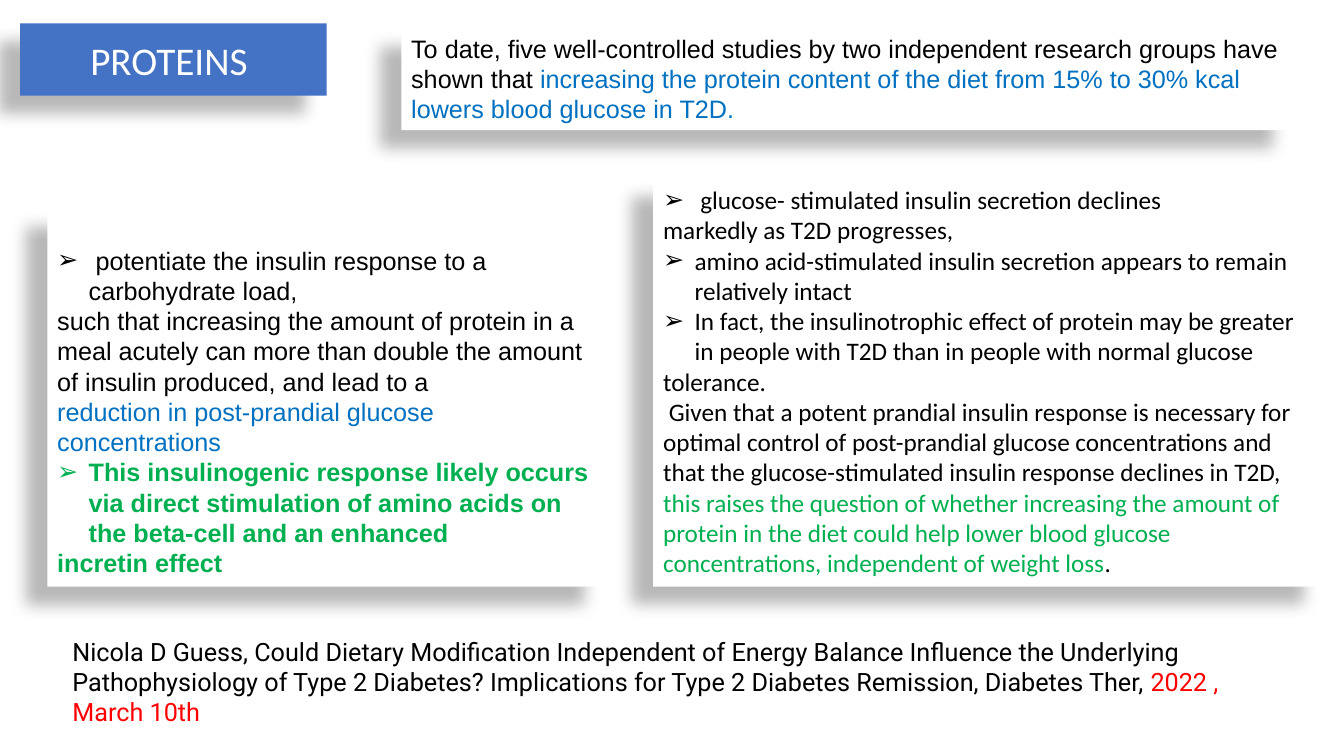
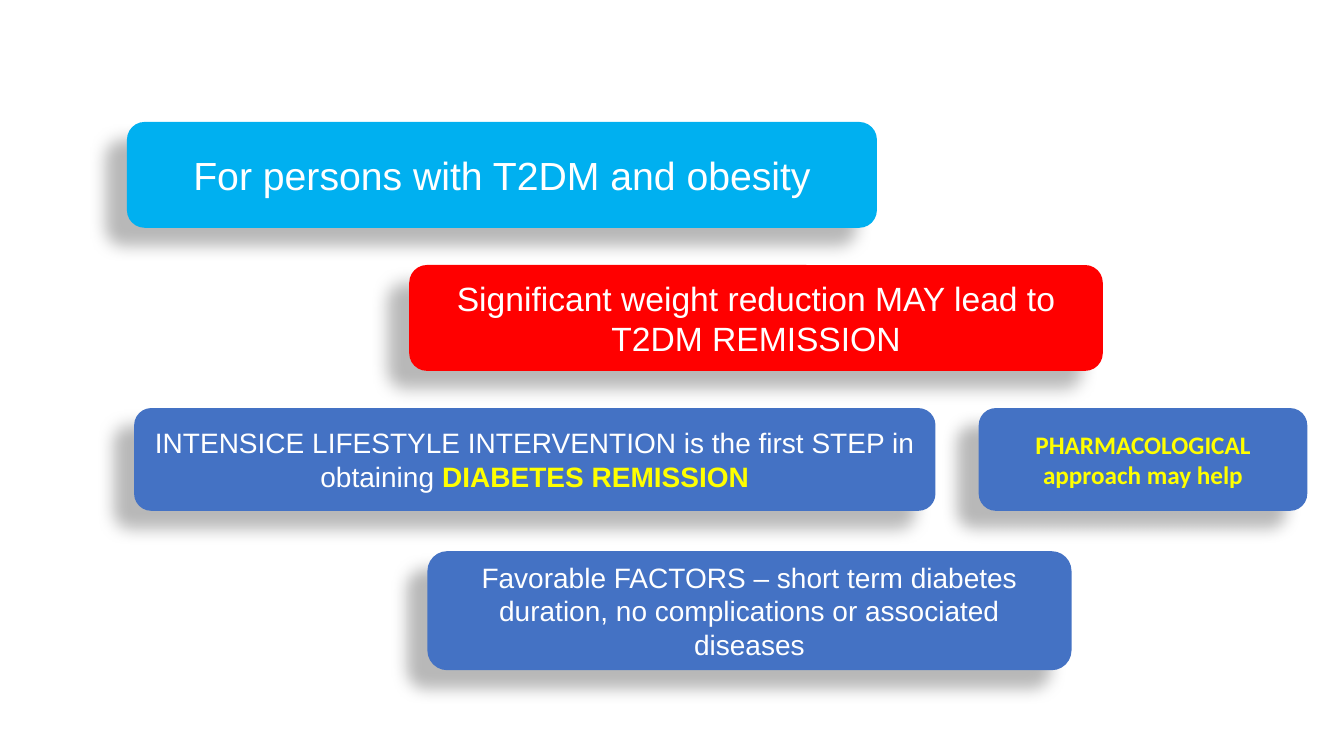
"""Build two slides on protein intake and remission of type 2 diabetes."""
from lxml import etree
from pptx import Presentation
from pptx.dml.color import RGBColor
from pptx.enum.shapes import MSO_SHAPE
from pptx.enum.text import MSO_ANCHOR, MSO_AUTO_SIZE, PP_ALIGN
from pptx.oxml.ns import qn
from pptx.util import Pt

RECT, ROUNDED = MSO_SHAPE.RECTANGLE, MSO_SHAPE.ROUNDED_RECTANGLE
LEFT, CENTER = PP_ALIGN.LEFT, PP_ALIGN.CENTER
TOP, MIDDLE = MSO_ANCHOR.TOP, MSO_ANCHOR.MIDDLE
GROW, FIXED = MSO_AUTO_SIZE.SHAPE_TO_FIT_TEXT, MSO_AUTO_SIZE.NONE


class Theme:
    black, white = "000000", "FFFFFF"
    box_blue, sky, red = "4472C4", "00B0F0", "FF0000"
    link_blue, green, yellow = "0070C0", "00B050", "FFFF00"
    sans, humanist, citation = "Arial", "Calibri", "Roboto"
    body, step, lead, title = 18, 20, 24, 28
    bullet, bullet_indent = "➢", 22.5
    inset, body_line = 3.6, 21.6
    shadow_blur, shadow_distance, shadow_angle, shadow_alpha = 11.8, 19.7, 141, 28


SLIDE_SIZE = (960, 540)

CITATION_BOX = (44.6, 450.7, 882, 72.7)
CITATION = [(False, [
    ("Nicola D Guess, Could Dietary Modification Independent of Energy Balance Influence "
     "the Underlying Pathophysiology of Type 2 Diabetes? Implications for Type 2 Diabetes "
     "Remission, Diabetes Ther, ", Theme.black, False),
    ("2022 , March 10th", Theme.red, False),
])]

TITLE_BOX = (14.4, 16.6, 218.9, 51.8)
TITLE = [(False, [("PROTEINS ", Theme.white, False)])]

INSULIN_RESPONSE = [
    (True, [(" potentiate the insulin response to a carbohydrate load,", Theme.black, False)]),
    (False, [("such that increasing the amount of protein in a meal acutely can more than "
              "double the amount of insulin produced, and lead to a", Theme.black, False)]),
    (False, [("reduction in post-prandial glucose concentrations", Theme.link_blue, False)]),
    (True, [("This insulinogenic response likely occurs via direct stimulation of amino acids "
             "on the beta-cell and an enhanced", Theme.green, True)]),
    (False, [("incretin effect", Theme.green, True)]),
]

INSULIN_SECRETION = [
    (True, [(" glucose- stimulated insulin secretion declines", Theme.black, False)]),
    (False, [("markedly as T2D progresses,", Theme.black, False)]),
    (True, [("amino acid-stimulated insulin secretion appears to remain relatively intact",
             Theme.black, False)]),
    (True, [("In fact, the insulinotrophic effect of protein may be greater in people with "
             "T2D than in people with normal glucose", Theme.black, False)]),
    (False, [("tolerance.", Theme.black, False)]),
    (False, [
        (" Given that a potent prandial insulin response is necessary for optimal control of "
         "post-prandial glucose concentrations and that the glucose-stimulated insulin "
         "response declines in T2D, ", Theme.black, False),
        ("this raises the question of whether increasing the amount of protein in the diet "
         "could help lower blood glucose concentrations, independent of weight loss",
         Theme.green, False),
        (".", Theme.black, False),
    ]),
]

STUDIES = [(False, [
    ("To date, five well-controlled studies by two independent research groups have shown "
     "that ", Theme.black, False),
    ("increasing the protein content of the diet from 15% to 30% kcal lowers blood glucose "
     "in T2D.", Theme.link_blue, False),
])]

PANELS = [
    ((33.8, 149.8, 398.9, 269.3), Theme.sans, INSULIN_RESPONSE, Theme.body_line),
    ((466.6, 128.2, 480.2, 290.9), Theme.humanist, INSULIN_SECRETION, 0),
    ((286.6, 20.2, 637.2, 72.7), Theme.sans, STUDIES, 0),
]

FIRST_ROW_TOP, ROW_PITCH = 87.1, 102.2
STEPS = [
    (0, 90.7, 535.7, 75.6, Theme.sky, Theme.sans, Theme.title,
     [("For persons with T2DM and obesity", Theme.white, False)]),
    (2, 95.8, 572.4, 73.4, Theme.box_blue, Theme.sans, Theme.step,
     [("INTENSICE LIFESTYLE INTERVENTION is the first STEP in obtaining ", Theme.white, False),
      ("DIABETES REMISSION", Theme.yellow, True)]),
    (1, 292.3, 495.4, 75.6, Theme.red, Theme.sans, Theme.lead,
     [("Significant weight reduction MAY lead to T2DM REMISSION", Theme.white, False)]),
    (3, 305.3, 460.1, 85, Theme.box_blue, Theme.sans, Theme.step,
     [("Favorable FACTORS – short term diabetes duration, no complications or associated "
       "diseases", Theme.white, False)]),
    (2, 699.1, 234.7, 73.4, Theme.box_blue, Theme.humanist, Theme.body,
     [("PHARMACOLOGICAL approach may help", Theme.yellow, True)]),
]


def add_bullet(paragraph):
    properties = paragraph._p.get_or_add_pPr()
    properties.set("marL", str(Pt(Theme.bullet_indent)))
    properties.set("indent", str(-Pt(Theme.bullet_indent)))
    etree.SubElement(properties, qn("a:buFont"), typeface=Theme.sans)
    etree.SubElement(properties, qn("a:buChar"), char=Theme.bullet)


def write(frame, paragraphs, font, size, align=LEFT, anchor=TOP, fit=GROW):
    frame.word_wrap = True
    frame.auto_size = fit
    frame.vertical_anchor = anchor
    for index, (bulleted, runs) in enumerate(paragraphs):
        paragraph = frame.add_paragraph() if index else frame.paragraphs[0]
        paragraph.alignment = align
        if bulleted:
            add_bullet(paragraph)
        for text, color, bold in runs:
            run = paragraph.add_run()
            run.text = text
            run.font.name = font
            run.font.size = Pt(size)
            run.font.bold = bold
            run.font.color.rgb = RGBColor.from_string(color)


def cast_shadow(card):
    card.shadow.inherit = False
    effects = card._element.spPr.find(qn("a:effectLst"))
    shadow = etree.SubElement(
        effects, qn("a:outerShdw"), blurRad=str(Pt(Theme.shadow_blur)),
        dist=str(Pt(Theme.shadow_distance)), dir=str(Theme.shadow_angle * 60000),
        algn="ctr", rotWithShape="0")
    color = etree.SubElement(shadow, qn("a:srgbClr"), val=Theme.black)
    etree.SubElement(color, qn("a:alpha"), val=str(Theme.shadow_alpha * 1000))


def add_card(slide, outline, box, fill):
    card = slide.shapes.add_shape(outline, *map(Pt, box))
    card.fill.solid()
    card.fill.fore_color.rgb = RGBColor.from_string(fill)
    card.line.fill.background()
    cast_shadow(card)
    return card.text_frame


def build_proteins(slide):
    citation = slide.shapes.add_textbox(*map(Pt, CITATION_BOX)).text_frame
    write(citation, CITATION, Theme.citation, Theme.body)
    title = add_card(slide, RECT, TITLE_BOX, Theme.box_blue)
    write(title, TITLE, Theme.humanist, Theme.title, CENTER, MIDDLE, FIXED)
    for box, font, paragraphs, headroom in PANELS:
        panel = add_card(slide, RECT, box, Theme.white)
        panel.margin_top = Pt(Theme.inset + headroom)
        write(panel, paragraphs, font, Theme.body)


def build_remission(slide):
    for row, left, width, height, fill, font, size, runs in STEPS:
        box = (left, FIRST_ROW_TOP + row * ROW_PITCH, width, height)
        step = add_card(slide, ROUNDED, box, fill)
        write(step, [(False, runs)], font, size, CENTER, MIDDLE, FIXED)


def main():
    deck = Presentation()
    deck.slide_width, deck.slide_height = map(Pt, SLIDE_SIZE)
    blank = deck.slide_layouts[6]
    for build in (build_proteins, build_remission):
        build(deck.slides.add_slide(blank))
    deck.save("out.pptx")


if __name__ == "__main__":
    main()
